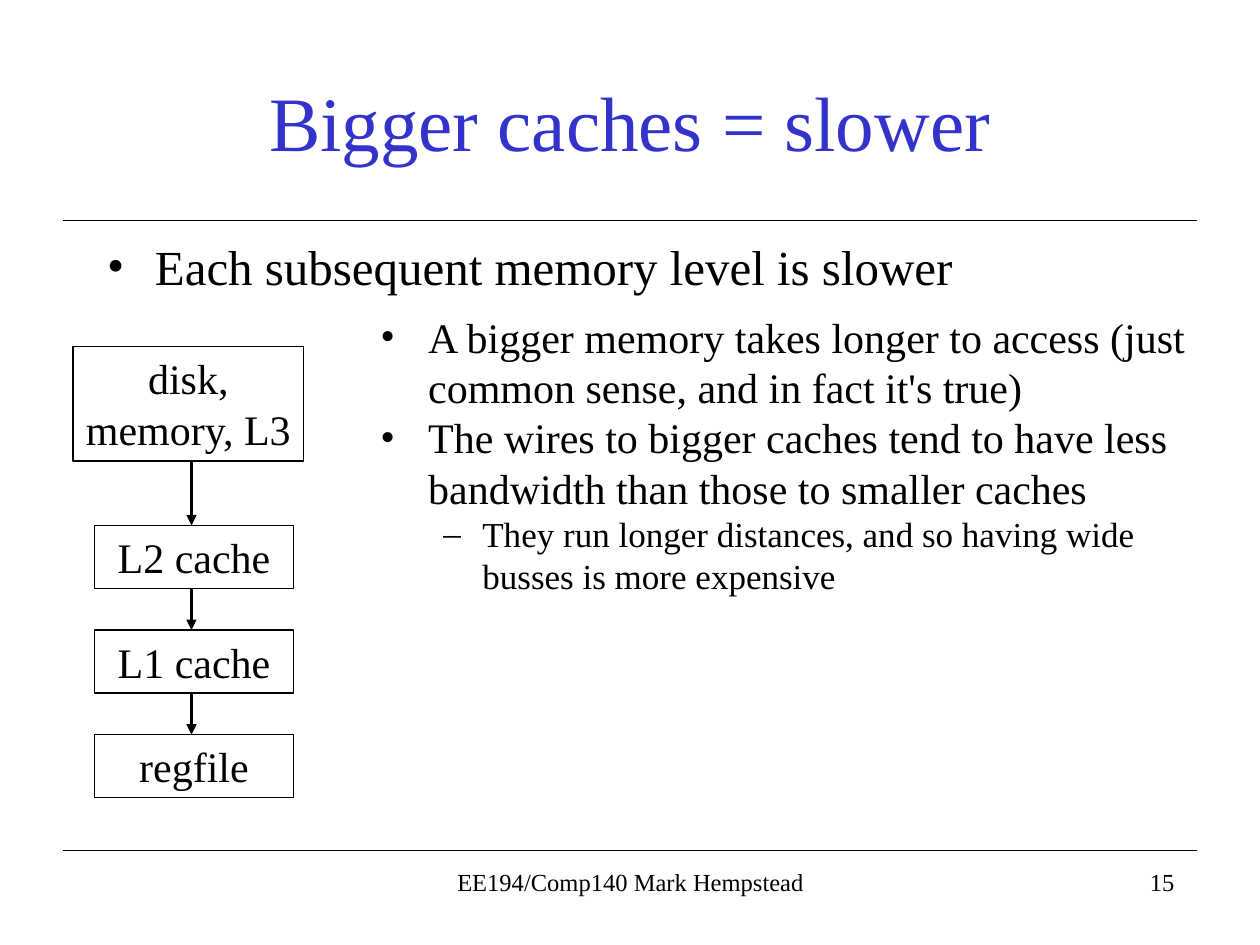
from lxml import etree
from pptx import Presentation
from pptx.dml.color import RGBColor
from pptx.enum.shapes import MSO_CONNECTOR, MSO_SHAPE
from pptx.enum.text import MSO_ANCHOR, MSO_AUTO_SIZE, PP_ALIGN
from pptx.oxml.ns import qn
from pptx.util import Inches, Pt

FONT = "Times New Roman"
BLACK, WHITE, BLUE = "000000", "FFFFFF", "3333CC"
LEFT, CENTER, RIGHT = PP_ALIGN.LEFT, PP_ALIGN.CENTER, PP_ALIGN.RIGHT
TOP, MIDDLE = MSO_ANCHOR.TOP, MSO_ANCHOR.MIDDLE
FIXED, GROW = MSO_AUTO_SIZE.NONE, MSO_AUTO_SIZE.SHAPE_TO_FIT_TEXT
STRAIGHT, RECTANGLE = MSO_CONNECTOR.STRAIGHT, MSO_SHAPE.RECTANGLE


def color(value):
    """Turn a hex string into a colour."""
    return RGBColor.from_string(value)


def place(shape, box):
    """Move a shape to a box of left, top, width and height in inches."""
    shape.left, shape.top, shape.width, shape.height = map(Inches, box)


def prepare_frame(shape, anchor=TOP, auto_size=FIXED):
    """Set wrapping, anchor and sizing, and return the text frame."""
    frame = shape.text_frame
    frame.word_wrap = True
    frame.auto_size = auto_size
    frame.vertical_anchor = anchor
    return frame


def write(paragraph, text, size, alignment=LEFT, text_color=BLACK):
    """Add one formatted run to a paragraph."""
    paragraph.alignment = alignment
    run = paragraph.add_run()
    run.text = text
    run.font.name = FONT
    run.font.size = Pt(size)
    run.font.color.rgb = color(text_color)


def add_bullet(paragraph, character, margin, indent):
    """Give a paragraph a bullet character and a hanging indent."""
    properties = paragraph._p.get_or_add_pPr()
    properties.set("marL", str(Inches(margin)))
    properties.set("indent", str(Inches(indent)))
    etree.SubElement(properties, qn("a:buFont"), typeface=FONT)
    etree.SubElement(properties, qn("a:buChar"), char=character)


def add_line(slide, start, end, width, arrow=False):
    """Draw a straight black line, with an arrowhead at its end if asked."""
    line = slide.shapes.add_connector(STRAIGHT, *map(Inches, start + end))
    line.line.color.rgb = color(BLACK)
    line.line.width = Pt(width)
    if arrow:
        etree.SubElement(line.line._get_or_add_ln(), qn("a:tailEnd"), type="triangle")
    etree.SubElement(line._element.spPr, qn("a:effectLst"))


def add_text(slide, box, text, size, alignment):
    """Add a text box with one line of text."""
    shape = slide.shapes.add_textbox(*map(Inches, box))
    write(prepare_frame(shape).paragraphs[0], text, size, alignment)


def fill_title(slide, box):
    """Write the slide title in its placeholder."""
    title = slide.shapes.title
    place(title, box)
    paragraph = prepare_frame(title, MIDDLE).paragraphs[0]
    write(paragraph, "Bigger caches = slower", 44, CENTER, BLUE)


def fill_body(slide, box):
    """Write the main statement in the body placeholder."""
    body = slide.placeholders[1]
    place(body, box)
    paragraph = prepare_frame(body).paragraphs[0]
    paragraph.space_before = Pt(5.6)
    write(paragraph, "Each subsequent memory level is slower", 28)
    add_bullet(paragraph, "•", 0.38, -0.38)


def add_reasons(slide, box):
    """List the reasons why bigger caches are slower."""
    reasons = [
        (0, "A bigger memory takes longer to access (just common sense, and in fact it's true)"),
        (0, "The wires to bigger caches tend to have less bandwidth than those to smaller caches"),
        (1, "They run longer distances, and so having wide busses is more expensive"),
    ]
    styles = [(24, "•", 0.38, -0.38), (20, "–", 0.81, -0.31)]
    frame = prepare_frame(slide.shapes.add_textbox(*map(Inches, box)))
    for index, (level, text) in enumerate(reasons):
        paragraph = frame.add_paragraph() if index else frame.paragraphs[0]
        paragraph.level = level
        size, *bullet = styles[level]
        write(paragraph, text, size)
        add_bullet(paragraph, *bullet)


def add_level(slide, box, text):
    """Add one memory level as an outlined rectangle."""
    shape = slide.shapes.add_shape(RECTANGLE, *map(Inches, box))
    shape.shadow.inherit = False
    shape.fill.solid()
    shape.fill.fore_color.rgb = color(WHITE)
    shape.line.color.rgb = color(BLACK)
    shape.line.width = Pt(0.75)
    write(prepare_frame(shape, TOP, GROW).paragraphs[0], text, 24, CENTER)


def add_hierarchy(slide, box):
    """Stack the memory levels and link them with downward arrows."""
    left, top, width, height = box
    level_height, pitch = 0.5, 0.83
    names = ["L2 cache", "L1 cache", "regfile"]
    first_top = top + height - level_height - pitch * (len(names) - 1)
    tops = [first_top + pitch * index for index in range(len(names))]
    for level_top in tops:
        add_line(slide, (left + 0.94, level_top - 0.58), (left + 0.94, level_top), 1.5, True)
    add_level(slide, (left, top, width, 0.91), "disk, memory, L3")
    for name, level_top in zip(names, tops):
        add_level(slide, (left + 0.17, level_top, 1.58, level_height), name)


def add_footer(slide, box):
    """Add the course line and the slide number under a rule."""
    left, top, width, height = box
    add_line(slide, (left, top), (left + width, top), 0.75)
    for offset, text, alignment in [
        (2.92, "EE194/Comp140 Mark Hempstead", CENTER),
        (5.75, "15", RIGHT),
    ]:
        add_text(slide, (left + offset, top + 0.08, 3.17, height - 0.08), text, 14, alignment)


def main():
    """Build and save the slide."""
    presentation = Presentation()
    presentation.slide_width, presentation.slide_height = Inches(10), Inches(7.5)
    slide = presentation.slides.add_slide(presentation.slide_layouts[1])
    fill_title(slide, (0.75, 0.33, 8.5, 1.25))
    add_line(slide, (0.5, 1.75), (9.5, 1.75), 0.75)
    fill_body(slide, (0.75, 1.83, 8.5, 0.83))
    add_hierarchy(slide, (0.58, 2.75, 1.83, 3.58))
    add_reasons(slide, (2.92, 2.42, 6.75, 2.67))
    add_footer(slide, (0.5, 6.75, 9, 0.58))
    presentation.save("out.pptx")


if __name__ == "__main__":
    main()
